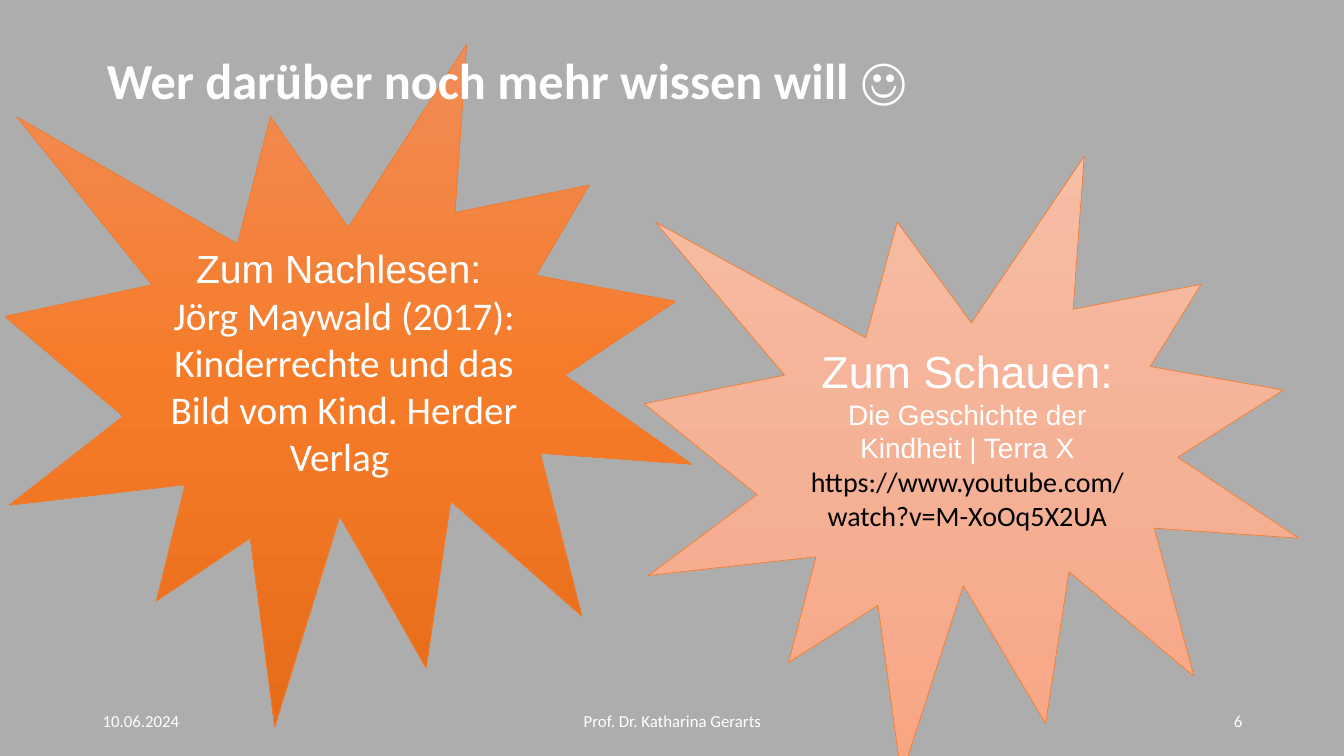
"""Build a slide with two starbursts of further reading and viewing."""
from dataclasses import dataclass

from copy import deepcopy
from pptx import Presentation
from pptx.dml.color import RGBColor
from pptx.enum.shapes import MSO_SHAPE
from pptx.enum.text import MSO_ANCHOR, PP_ALIGN
from pptx.util import Inches, Pt

BURST = MSO_SHAPE.EXPLOSION1
TOP, MIDDLE, BOTTOM = MSO_ANCHOR.TOP, MSO_ANCHOR.MIDDLE, MSO_ANCHOR.BOTTOM
LEFT, CENTER, RIGHT = PP_ALIGN.LEFT, PP_ALIGN.CENTER, PP_ALIGN.RIGHT


@dataclass
class Theme:
    ground: str = "ADADAD"
    light: str = "FFFFFF"
    dark: str = "000000"
    edge: str = "ED7D31"
    pale: tuple = ("F7BDA5", "F5B196", "F8A582")
    vivid: tuple = ("F18C57", "F67B28", "E56C19")
    sans: str = "Arial"
    body: str = "Calibri"
    title: int = 36
    head: int = 32
    text: int = 28
    link: int = 20
    foot: int = 12


theme = Theme()


def color(code):
    return RGBColor.from_string(code)


def write(par, text, size, face, code, align, bold=False):
    par.alignment = align
    run = par.add_run()
    run.text = text
    run.font.size = Pt(size)
    run.font.name = face
    run.font.bold = bold
    run.font.color.rgb = color(code)


deck = Presentation()
deck.slide_width, deck.slide_height = Inches(13.33), Inches(7.5)
slide = deck.slides.add_slide(deck.slide_layouts[5])
slide.background.fill.solid()
slide.background.fill.fore_color.rgb = color(theme.ground)

bursts = [
    ((6.39, 1.55, 6.49, 6.16), theme.pale, 0.25, [
        ("Zum Schauen:", theme.head, theme.sans, theme.light),
        ("Die Geschichte der Kindheit | Terra X",
         theme.link, theme.sans, theme.light),
        ("https://www.youtube.com/watch?v=M-XoOq5X2UA",
         theme.link, theme.body, theme.dark),
    ]),
    ((0.05, 0.44, 6.81, 6.77), theme.vivid, 0.05, [
        ("Zum Nachlesen: ", theme.text, theme.sans, theme.light),
        ("Jörg Maywald (2017): Kinderrechte und das Bild vom Kind. "
         "Herder Verlag ", theme.text, theme.body, theme.light),
    ]),
]
for box, shades, inset, lines in bursts:
    star = slide.shapes.add_shape(BURST, *map(Inches, box))
    star.shadow.inherit = False
    star.line.color.rgb = color(theme.edge)
    star.line.width = Pt(0.5)
    star.fill.gradient()
    star.fill.gradient_angle = 270
    first = star.element.spPr.xpath(".//a:gs")[0]
    first.addnext(deepcopy(first))
    for stop, shade, place in zip(star.fill.gradient_stops, shades, (0, 0.5, 1)):
        stop.color.rgb = color(shade)
        stop.position = place
    frame = star.text_frame
    frame.word_wrap = True
    frame.vertical_anchor = BOTTOM
    frame.margin_bottom = Inches(inset)
    for i, line in enumerate(lines):
        par = frame.add_paragraph() if i else frame.paragraphs[0]
        write(par, *line, CENTER)

title = slide.shapes.title
title.left, title.top = Inches(0.96), Inches(0.44)
title.width, title.height = Inches(8.19), Inches(1.1)
title.text_frame.vertical_anchor = TOP
write(title.text_frame.paragraphs[0], "Wer darüber noch mehr wissen will ☺",
      theme.title, theme.body, theme.light, LEFT, True)
slide.shapes.element.append(title.element)

feet = [
    (0.92, 3, "10.06.2024", LEFT),
    (4.42, 4.5, "Prof. Dr. Katharina Gerarts", CENTER),
    (9.42, 3, "6", RIGHT),
]
for left, width, text, align in feet:
    foot = slide.shapes.add_textbox(
        Inches(left), Inches(6.95), Inches(width), Inches(0.4))
    foot.text_frame.word_wrap = True
    foot.text_frame.vertical_anchor = MIDDLE
    write(foot.text_frame.paragraphs[0], text,
          theme.foot, theme.body, theme.light, align)

deck.save("out.pptx")
